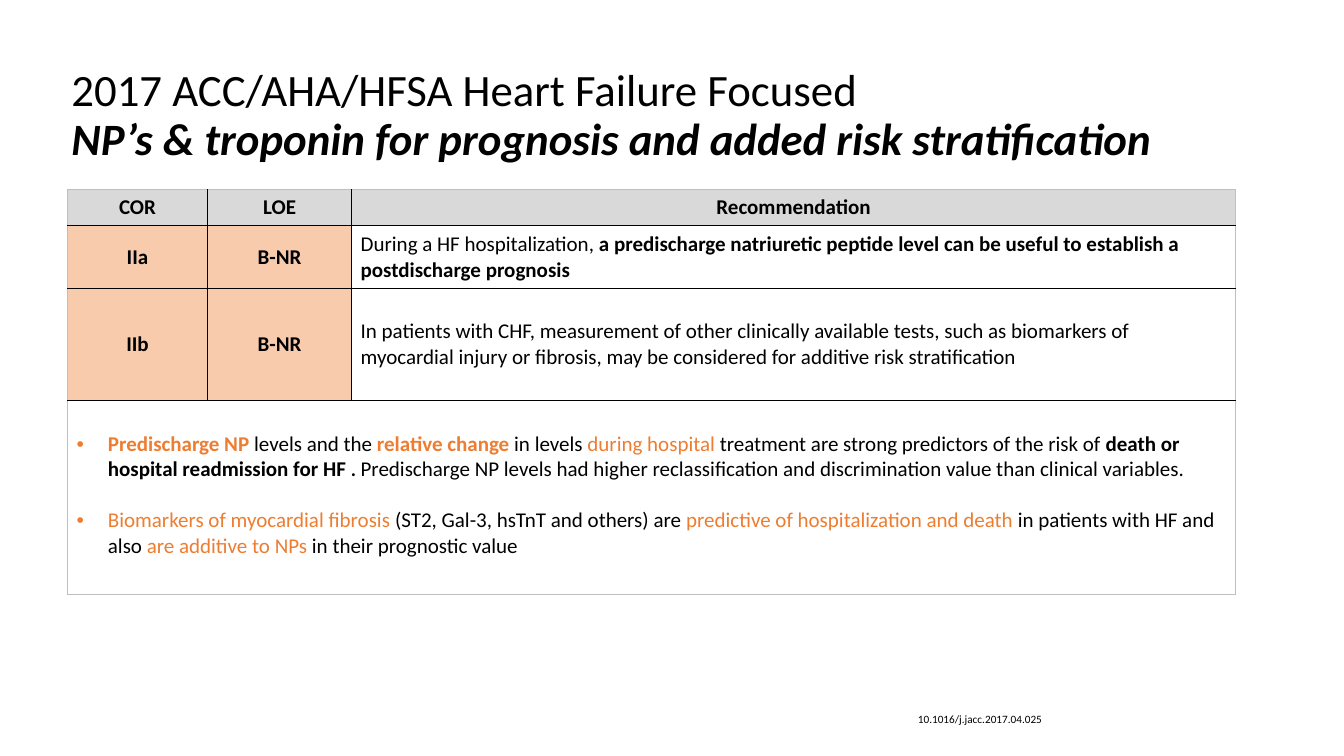
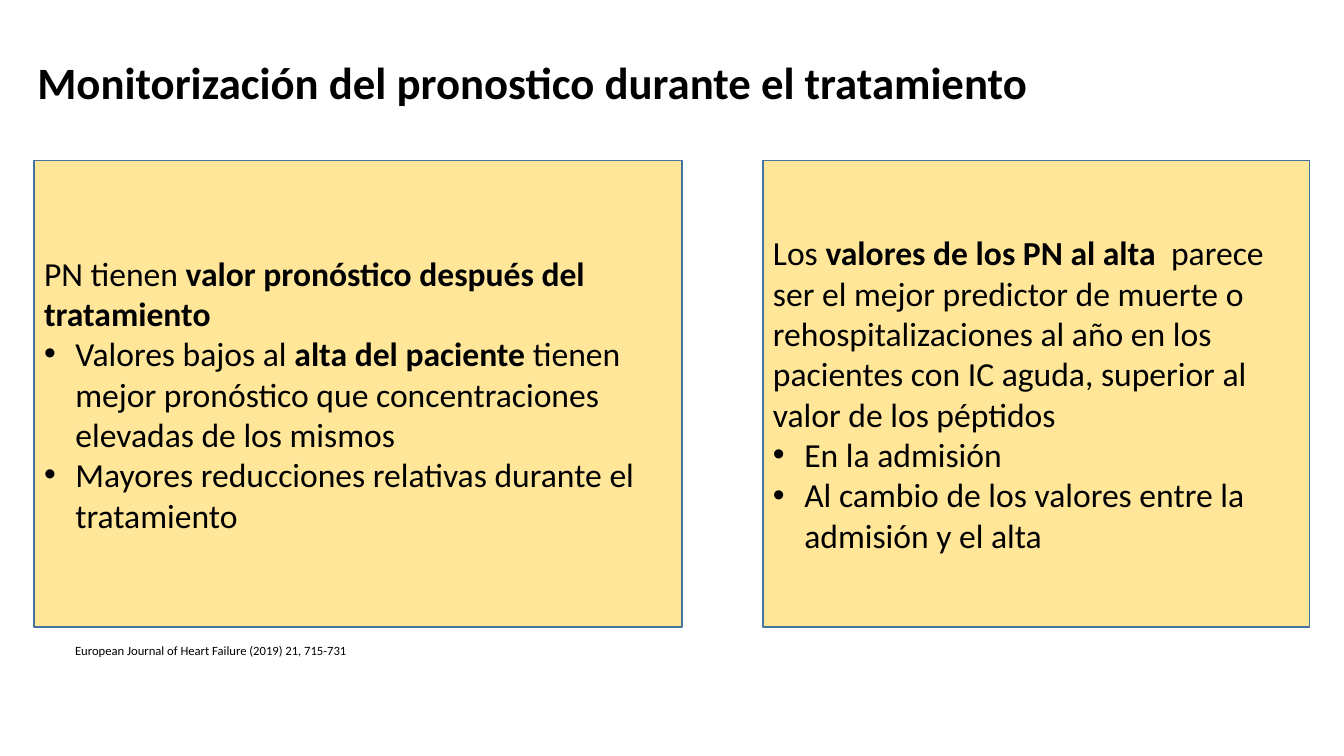
from dataclasses import dataclass
from typing import Any, Optional

import pptx
import pptx.dml.color
import pptx.enum.shapes
import pptx.enum.text
import pptx.oxml.ns
import pptx.util
from lxml import etree

Cm = pptx.util.Cm
Pt = pptx.util.Pt
RGBColor = pptx.dml.color.RGBColor
ALIGN = pptx.enum.text.PP_ALIGN
ANCHOR = pptx.enum.text.MSO_ANCHOR
qn = pptx.oxml.ns.qn

# Shared style
FONT = "Calibri"
BLACK = RGBColor(0x00, 0x00, 0x00)
WHITE = RGBColor(0xFF, 0xFF, 0xFF)
ORANGE = RGBColor(0xED, 0x7D, 0x31)
PEACH = RGBColor(0xF8, 0xCB, 0xAD)
HEADER_GRAY = RGBColor(0xD9, 0xD9, 0xD9)
EDGE_GRAY = RGBColor(0xBF, 0xBF, 0xBF)
YELLOW = RGBColor(0xFF, 0xE6, 0x99)
PANEL_BLUE = RGBColor(0x43, 0x73, 0x9E)
BULLET_INDENT = Cm(0.79)


@dataclass(frozen=True)
class Run:
    text: str
    bold: bool = False
    italic: bool = False
    color: RGBColor = BLACK
    size: Optional[float] = None


@dataclass(frozen=True)
class Para:
    runs: tuple[Run, ...]
    bullet: bool = False
    space_before: float = 0


@dataclass(frozen=True)
class Box:
    """Position and size in centimetres."""
    left: float
    top: float
    width: float
    height: float

    def lengths(self) -> tuple[Any, ...]:
        return Cm(self.left), Cm(self.top), Cm(self.width), Cm(self.height)


@dataclass(frozen=True)
class Panel:
    box: Box
    paras: list[Para]


@dataclass(frozen=True)
class Recommendation:
    cor: str
    loe: str
    advice: Para


def para(*parts: "Run | str", bullet: bool = False, space_before: float = 0) -> Para:
    runs = tuple(Run(part) if isinstance(part, str) else part for part in parts)
    return Para(runs, bullet, space_before)


def bold(text: str, **extra: Any) -> Run:
    return Run(text, bold=True, **extra)


def orange(text: str, **extra: Any) -> Run:
    return Run(text, color=ORANGE, **extra)


def write_text(frame: Any, paras: list[Para], *, size: float, align: Any = ALIGN.LEFT,
               line_spacing: Optional[float] = None) -> None:
    frame.word_wrap = True
    for index, content in enumerate(paras):
        line = frame.paragraphs[0] if index == 0 else frame.add_paragraph()
        line.alignment = align
        if line_spacing:
            line.line_spacing = line_spacing
        if content.space_before:
            line.space_before = Pt(content.space_before)
        if content.bullet:
            props = line._p.get_or_add_pPr()
            props.set("marL", str(BULLET_INDENT))
            props.set("indent", str(-BULLET_INDENT))
            etree.SubElement(props, qn("a:buFont")).set("typeface", "Arial")
            etree.SubElement(props, qn("a:buChar")).set("char", "•")
        for part in content.runs:
            run = line.add_run()
            run.text = part.text
            run.font.name = FONT
            run.font.size = Pt(part.size or size)
            run.font.bold = part.bold
            run.font.italic = part.italic
            run.font.color.rgb = part.color


def add_title(slide: Any, box: Box, paras: list[Para]) -> None:
    frame = slide.shapes.add_textbox(*box.lengths()).text_frame
    frame.vertical_anchor = ANCHOR.MIDDLE
    write_text(frame, paras, size=32, line_spacing=0.9)


def add_block(slide: Any, box: Box, paras: list[Para], *, size: float, fill: RGBColor,
              line: RGBColor, align: Any = ALIGN.LEFT) -> None:
    block = slide.shapes.add_shape(
        pptx.enum.shapes.MSO_SHAPE.RECTANGLE, *box.lengths())
    block.shadow.inherit = False
    block.fill.solid()
    block.fill.fore_color.rgb = fill
    block.line.color.rgb = line
    block.line.width = Pt(1)
    block.text_frame.vertical_anchor = ANCHOR.MIDDLE
    write_text(block.text_frame, paras, size=size, align=align)


def add_source(slide: Any, box: Box, text: str, size: float) -> None:
    add_block(slide, box, [para(text)], size=size, fill=WHITE, line=WHITE,
              align=ALIGN.CENTER)


def set_border(cell: Any, side: str, color: RGBColor) -> None:
    line = etree.SubElement(cell._tc.get_or_add_tcPr(), qn(f"a:ln{side}"), w=str(Pt(1)))
    fill = etree.SubElement(line, qn("a:solidFill"))
    etree.SubElement(fill, qn("a:srgbClr")).set("val", str(color))


def format_cell(cell: Any, outer_sides: str, fill: Optional[RGBColor]) -> None:
    for side in "LRTB":
        set_border(cell, side, EDGE_GRAY if side in outer_sides else BLACK)
    if fill is None:
        cell.fill.background()
    else:
        cell.fill.solid()
        cell.fill.fore_color.rgb = fill
    cell.margin_left = cell.margin_right = Cm(0.23)
    cell.margin_top = cell.margin_bottom = Cm(0.13)


def add_recommendation_table(slide: Any, box: Box, widths: list[float],
                             heights: list[float], headings: list[str],
                             rows: list[Recommendation], evidence: list[Para]) -> None:
    table = slide.shapes.add_table(len(heights), len(widths), *box.lengths()).table
    table.first_row = table.horz_banding = False
    for column, width in zip(table.columns, widths):
        column.width = Cm(width)
    for row, height in zip(table.rows, heights):
        row.height = Cm(height)

    # Borders and fills
    last_row, last_col = len(heights) - 1, len(widths) - 1
    evidence_cell = table.cell(last_row, 0)
    evidence_cell.merge(table.cell(last_row, last_col))
    for r in range(last_row + 1):
        for c in range(last_col + 1):
            outer = (("L" if c == 0 else "") + ("T" if r == 0 else "")
                     + ("R" if c == last_col or r == last_row else "")
                     + ("B" if r == last_row else ""))
            fill = HEADER_GRAY if r == 0 else PEACH if r < last_row and c < last_col else None
            format_cell(table.cell(r, c), outer, fill)

    # Header and recommendations
    for c, heading in enumerate(headings):
        write_text(table.cell(0, c).text_frame, [para(bold(heading))], size=15,
                   align=ALIGN.CENTER)
    for r, item in enumerate(rows, start=1):
        contents = [para(bold(item.cor)), para(bold(item.loe)), item.advice]
        for c, content in enumerate(contents):
            cell = table.cell(r, c)
            cell.vertical_anchor = ANCHOR.MIDDLE
            write_text(cell.text_frame, [content], size=15,
                       align=ALIGN.LEFT if c == last_col else ALIGN.CENTER)

    # Evidence across the full width
    evidence_cell.margin_top = Cm(0.77)
    write_text(evidence_cell.text_frame, evidence, size=15)


def build_guideline(slide: Any) -> None:
    add_title(slide, Box(1.55, 1.5, 29.44, 2.87), [
        para("2017 ACC/AHA/HFSA Heart Failure Focused"),
        para(bold("NP’s & troponin for prognosis and added risk stratification",
                  italic=True)),
    ])
    add_recommendation_table(
        slide, Box(1.7, 4.78, 29.44, 10.19),
        widths=[3.53, 3.63, 22.28], heights=[0.89, 1.6, 2.82, 4.88],
        headings=["COR", "LOE", "Recommendation"],
        rows=[
            Recommendation("IIa", "B-NR", para(
                "During a HF hospitalization, ",
                bold("a predischarge natriuretic peptide level can be useful to "
                     "establish a postdischarge prognosis"))),
            Recommendation("IIb", "B-NR", para(
                "In patients with CHF, measurement of other clinically available tests, "
                "such as biomarkers of myocardial injury or fibrosis, may be considered "
                "for additive risk stratification")),
        ],
        evidence=[
            para(orange("Predischarge NP ", bold=True), "levels and the ",
                 orange("relative change ", bold=True), "in levels ",
                 orange("during hospital "),
                 "treatment are strong predictors of the risk of ",
                 bold("death or hospital readmission for HF "), bold(". ", size=14),
                 "Predischarge NP levels had higher reclassification and "
                 "discrimination value than clinical variables.", bullet=True),
            para(orange("Biomarkers of myocardial fibrosis "),
                 "(ST2, Gal-3, hsTnT and others) are ",
                 orange("predictive of hospitalization and death "),
                 "in patients with HF and also ", orange("are additive to NPs "),
                 "in their prognostic value", bullet=True, space_before=18),
        ])
    add_source(slide, Box(20.57, 17.81, 8.26, 0.64), "10.1016/j.jacc.2017.04.025", 8)


def build_monitoring(slide: Any) -> None:
    add_title(slide, Box(0.69, 0.3, 29.21, 3.68),
              [para(bold("Monitorización del pronostico durante el tratamiento"))])
    panels = [
        Panel(Box(0.86, 4.04, 16.33, 11.76), [
            para("PN tienen ", bold("valor pronóstico después del tratamiento")),
            para("Valores bajos al ", bold("alta del paciente "),
                 "tienen mejor pronóstico que concentraciones elevadas de los mismos",
                 bullet=True),
            para("Mayores reducciones relativas durante el tratamiento", bullet=True),
        ]),
        Panel(Box(19.23, 4.04, 13.77, 11.76), [
            para("Los ", bold("valores de los PN al alta  "),
                 "parece ser el mejor predictor de muerte o rehospitalizaciones al año "
                 "en los pacientes con IC aguda, superior al valor de los péptidos"),
            para("En la admisión", bullet=True),
            para("Al cambio de los valores entre la admisión y el alta", bullet=True),
        ]),
    ]
    for panel in panels:
        add_block(slide, panel.box, panel.paras, size=24, fill=YELLOW, line=PANEL_BLUE)
    add_source(slide, Box(1.6, 16.08, 7.42, 0.61),
               "European Journal of Heart Failure (2019) 21, 715-731", 9)


def main() -> None:
    deck = pptx.Presentation()
    deck.slide_width, deck.slide_height = Cm(33.87), Cm(19.05)
    blank = deck.slide_layouts[6]
    for build in (build_guideline, build_monitoring):
        build(deck.slides.add_slide(blank))
    deck.save("out.pptx")


if __name__ == "__main__":
    main()
